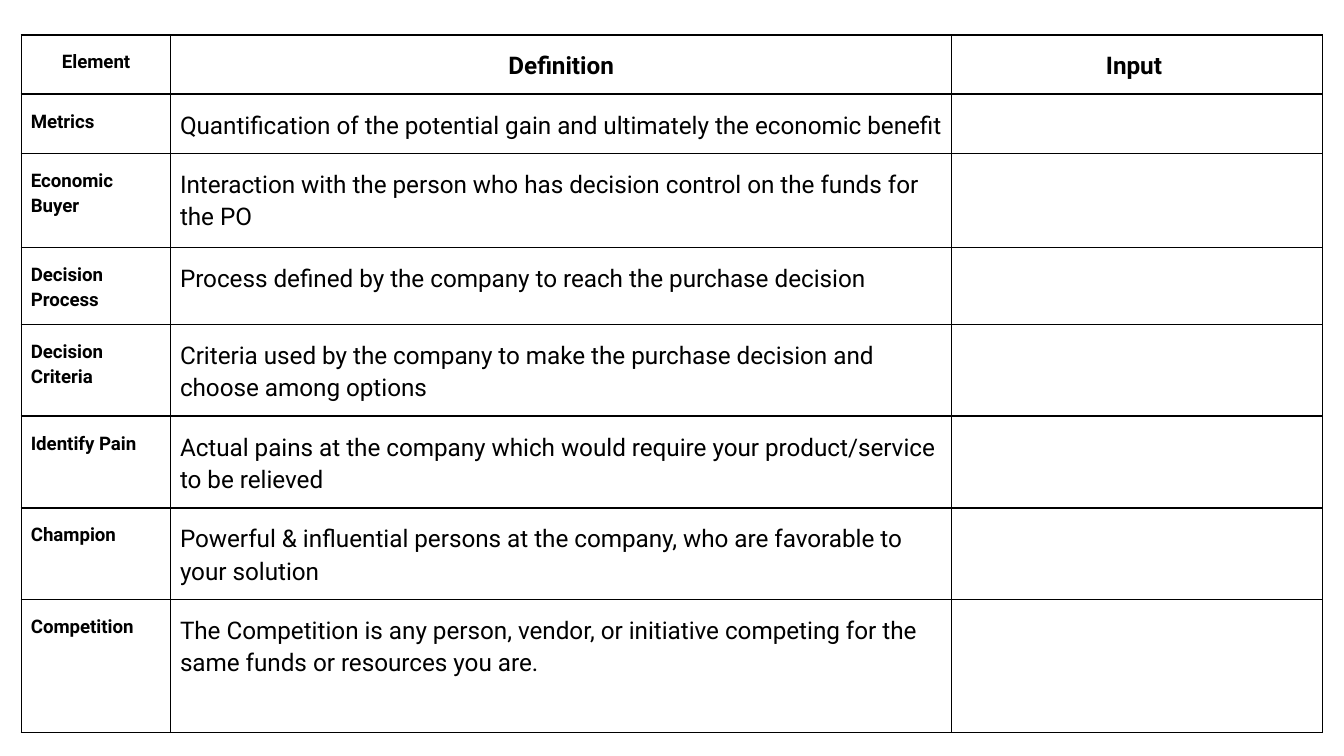
"""Build a slide with a sales qualification table of elements, definitions and inputs."""
from lxml import etree
from pptx import Presentation
from pptx.dml.color import RGBColor
from pptx.enum.text import PP_ALIGN
from pptx.oxml.ns import qn
from pptx.util import Inches, Pt

CENTER = PP_ALIGN.CENTER
LEFT = PP_ALIGN.LEFT
BLACK = "000000"
WHITE = "FFFFFF"
COLUMN_WIDTHS = [1.11, 5.81, 2.76]
ROW_HEIGHTS = [0.43, 0.39, 0.7, 0.46, 0.47, 0.67, 0.64, 0.99]
FONT_SIZES = [10, 13, 13]
MARGINS = {"margin_left": 0.07, "margin_right": 0.07, "margin_top": 0.1, "margin_bottom": 0.1}
ROWS = [
    ("Element", "Definition", "Input "),
    ("Metrics", "Quantification of the potential gain and ultimately the economic benefit", ""),
    ("Economic Buyer", "Interaction with the person who has decision control on the funds for the PO", ""),
    ("Decision Process", "Process defined by the company to reach the purchase decision", ""),
    ("Decision Criteria", "Criteria used by the company to make the purchase decision and choose among options", ""),
    ("Identify Pain", "Actual pains at the company which would require your product/service to be relieved", ""),
    ("Champion", "Powerful & influential persons at the company, who are favorable to your solution", ""),
    ("Competition", "The Competition is any person, vendor, or initiative competing for the same funds or resources you are.", ""),
]


def color(value):
    return RGBColor.from_string(value)


def add_borders(cell):
    properties = cell._tc.get_or_add_tcPr()
    for side in ("a:lnL", "a:lnR", "a:lnT", "a:lnB"):
        line = etree.SubElement(properties, qn(side), w=str(Pt(1)))
        fill = etree.SubElement(line, qn("a:solidFill"))
        etree.SubElement(fill, qn("a:srgbClr"), val=BLACK)


presentation = Presentation()
presentation.slide_width = Inches(10)
presentation.slide_height = Inches(10) * 9 // 16
slide = presentation.slides.add_slide(presentation.slide_layouts[6])

shape = slide.shapes.add_table(
    len(ROWS), len(COLUMN_WIDTHS), Inches(0.16), Inches(0.26),
    Inches(sum(COLUMN_WIDTHS)), Inches(sum(ROW_HEIGHTS)),
)
table = shape.table
for column, width in zip(table.columns, COLUMN_WIDTHS):
    column.width = Inches(width)
for row, height in zip(table.rows, ROW_HEIGHTS):
    row.height = Inches(height)

for row_index, texts in enumerate(ROWS):
    for column_index, text in enumerate(texts):
        cell = table.cell(row_index, column_index)
        add_borders(cell)
        cell.fill.solid()
        cell.fill.fore_color.rgb = color(WHITE)
        if not text:
            continue
        for name, value in MARGINS.items():
            setattr(cell, name, Inches(value))
        paragraph = cell.text_frame.paragraphs[0]
        paragraph.alignment = CENTER if row_index == 0 else LEFT
        paragraph.line_spacing = 1.15
        run = paragraph.add_run()
        run.text = text
        font_format = {
            "name": "Roboto",
            "size": Pt(FONT_SIZES[column_index]),
            "bold": row_index == 0 or column_index == 0,
        }
        for name, value in font_format.items():
            setattr(run.font, name, value)
        run.font.color.rgb = color(BLACK)

presentation.save("out.pptx")
